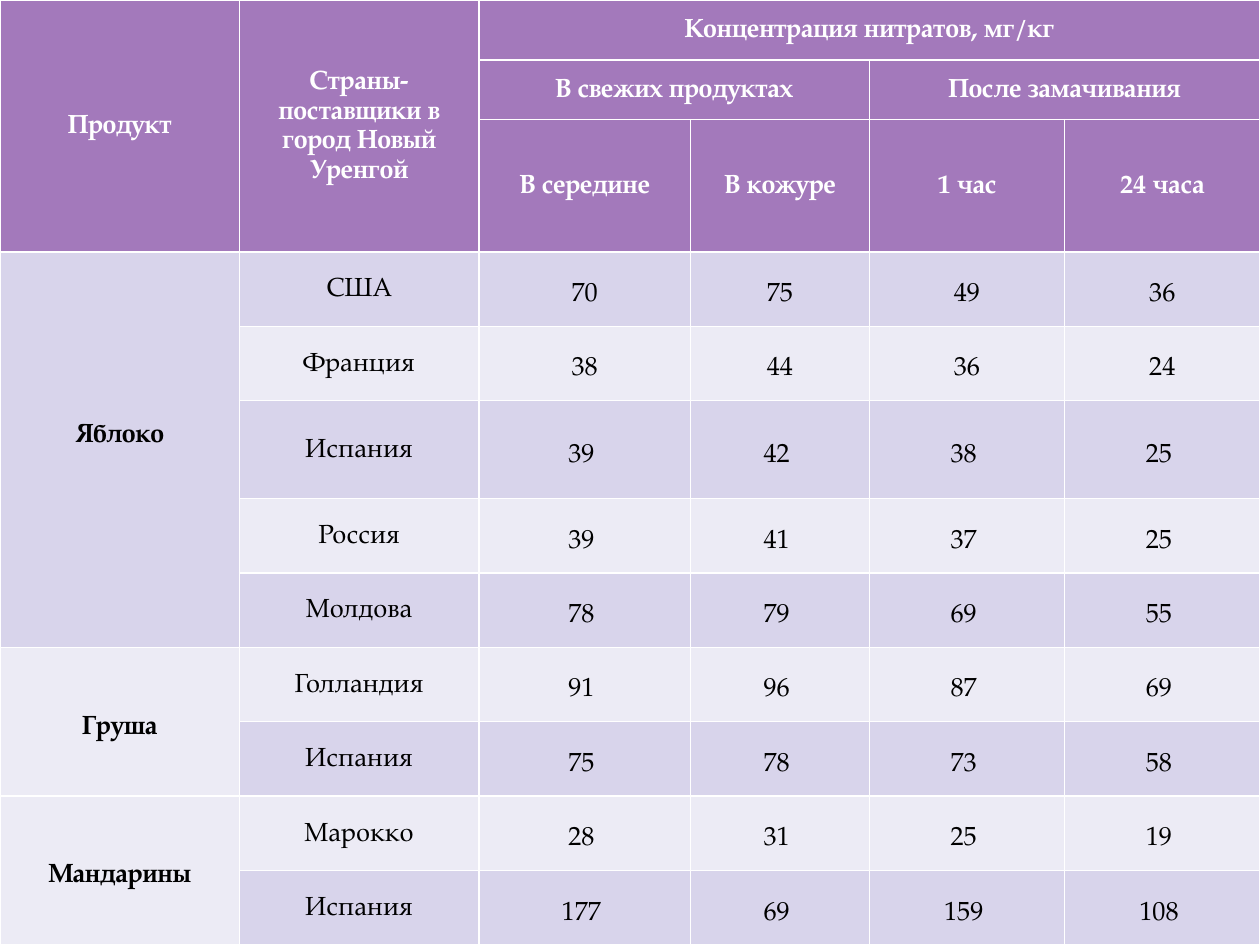
"""Build a slide with a table of nitrate levels in fruit."""
from lxml.etree import SubElement as Sub
from pptx import Presentation
from pptx.dml.color import RGBColor as RGB
from pptx.enum.text import MSO_ANCHOR as Anchor, PP_ALIGN as Align
from pptx.oxml.ns import qn
from pptx.util import Pt

HUES = {"head": "A379BB", "dark": "D8D4EB", "pale": "ECEBF5",
        "white": "FFFFFF", "black": "000000"}
FONT = "TeX Gyre Pagella"
WIDTHS = [136.8, 136.8, 121, 102.2, 111.6, 111.6]
HEIGHTS = [34.2, 34.2, 75.6, 42.5, 42.5, 56] + [42.5] * 6
ROWS = [
    ["Продукт", "Страны-поставщики в город Новый Уренгой",
     "Концентрация нитратов, мг/кг", "", "", ""],
    ["", "", "В свежих продуктах", "", "После замачивания", ""],
    ["", "", "В середине", "В кожуре", "1 час", "24 часа"],
    ["Яблоко", "США", "70", "75", "49", "36"],
    ["", "Франция", "38", "44", "36", "24"],
    ["", "Испания", "39", "42", "38", "25"],
    ["", "Россия", "39", "41", "37", "25"],
    ["", "Молдова", "78", "79", "69", "55"],
    ["Груша", "Голландия", "91", "96", "87", "69"],
    ["", "Испания", "75", "78", "73", "58"],
    ["Мандарины", "Марокко", "28", "31", "25", "19"],
    ["", "Испания", "177", "69", "159", "108"],
]
SPANS = [(0, 0, 2, 0), (0, 1, 2, 1), (0, 2, 0, 5), (1, 2, 1, 3),
         (1, 4, 1, 5), (3, 0, 7, 0), (8, 0, 9, 0), (10, 0, 11, 0)]
HEAD = 3


def edge(cell):
    props = cell._tc.get_or_add_tcPr()
    for side in ("lnL", "lnR", "lnT", "lnB"):
        line = Sub(props, qn("a:" + side), w=str(Pt(1)))
        fill = Sub(line, qn("a:solidFill"))
        Sub(fill, qn("a:srgbClr"), val=HUES["white"])


def write(cell, text, hue, bold, space):
    para = cell.text_frame.paragraphs[0]
    para.alignment = Align.CENTER
    para.line_spacing = space
    run = para.add_run()
    run.text = text
    run.font.name = FONT
    run.font.size = Pt(15)
    run.font.bold = bold
    run.font.color.rgb = RGB.from_string(HUES[hue])


deck = Presentation()
deck.slide_width, deck.slide_height = Pt(720), Pt(540)
slide = deck.slides.add_slide(deck.slide_layouts[6])
back = slide.background.fill
back.solid()
back.fore_color.rgb = RGB.from_string(HUES["black"])

table = slide.shapes.add_table(len(ROWS), len(WIDTHS), Pt(0), Pt(0),
                               Pt(720), Pt(540)).table
table.first_row = table.horz_banding = False
for col, width in zip(table.columns, WIDTHS):
    col.width = Pt(width)
for row, height in zip(table.rows, HEIGHTS):
    row.height = Pt(height)

for r, row in enumerate(ROWS):
    top = r < HEAD
    band = "head" if top else ("pale", "dark")[r % 2]
    for c, text in enumerate(row):
        cell = table.cell(r, c)
        cell.vertical_anchor = Anchor.MIDDLE
        cell.margin_left = cell.margin_right = Pt(5)
        cell.margin_top = cell.margin_bottom = Pt(0)
        if r > 4 and c > 1:
            cell.margin_right = Pt(8.75)
        edge(cell)
        cell.fill.solid()
        cell.fill.fore_color.rgb = RGB.from_string(HUES[band])
        if text:
            write(cell, text, "white" if top else "black", top or c == 0,
                  1.15 if top or c == 1 else 1.5)

table.cell(HEAD, 0).margin_bottom = Pt(22)
for r, c, last, end in SPANS:
    table.cell(r, c).merge(table.cell(last, end))

deck.save("out.pptx")
